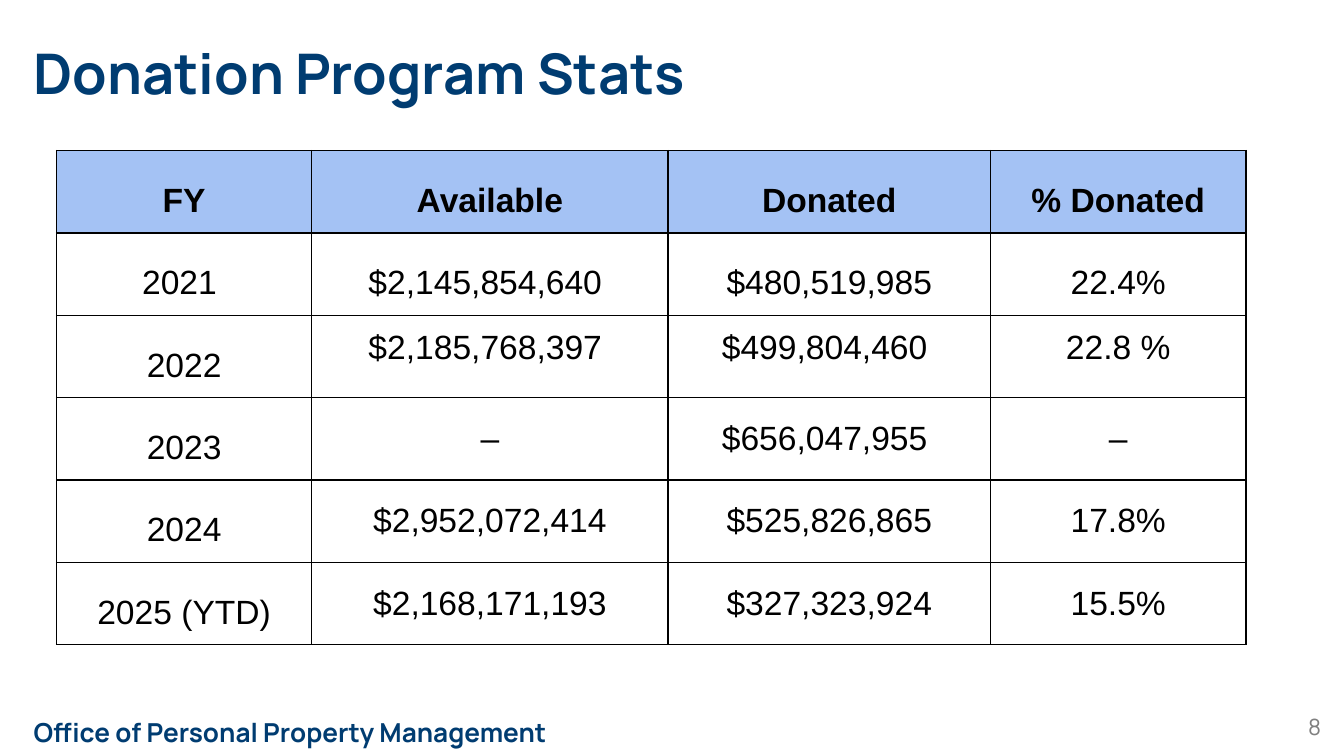
"""Build the Donation Program Stats slide with its table of yearly figures."""
from dataclasses import dataclass

from lxml import etree
from pptx import Presentation
from pptx.dml.color import RGBColor
from pptx.enum.text import MSO_ANCHOR, PP_ALIGN
from pptx.oxml.ns import qn
from pptx.util import Inches, Pt

TOP, MIDDLE, BOTTOM = MSO_ANCHOR.TOP, MSO_ANCHOR.MIDDLE, MSO_ANCHOR.BOTTOM
LEFT, CENTER, RIGHT = PP_ALIGN.LEFT, PP_ALIGN.CENTER, PP_ALIGN.RIGHT


@dataclass(frozen=True)
class Theme:
    brand_font: str = "Manrope"
    table_font: str = "Arial"
    navy: str = "003C71"
    gray: str = "808080"
    black: str = "000000"
    header_fill: str = "A4C2F4"
    title_size: int = 30
    table_size: int = 18
    footer_size: int = 14
    number_size: int = 12
    border_width: float = 0.75


THEME = Theme()
SLIDE_WIDTH = 10
SLIDE_HEIGHT = SLIDE_WIDTH * 9 / 16
MARGIN = 0.25

LABELS = [
    ("Donation Program Stats", (MARGIN, 0.29, 8.51, 0.56), TOP, LEFT,
     THEME.title_size, THEME.navy, True),
    ("Office of Personal Property Management", (MARGIN, 5.35, 4.42, 0.19), MIDDLE, LEFT,
     THEME.footer_size, THEME.navy, True),
    ("8", (9.23, 5.31, 0.6, 0.31), TOP, RIGHT,
     THEME.number_size, THEME.gray, False),
]

STATS = [
    ("FY", "Available", "Donated", "% Donated"),
    ("2021 ", "$2,145,854,640 ", "$480,519,985", "22.4%"),
    ("2022", "$2,185,768,397 ", "$499,804,460 ", "22.8 %"),
    ("2023", "–", "$656,047,955 ", "–"),
    ("2024", "$2,952,072,414", "$525,826,865", "17.8%"),
    ("2025 (YTD)", "$2,168,171,193", "$327,323,924", "15.5%"),
]
VALUE_ANCHORS = [BOTTOM, BOTTOM, TOP, MIDDLE, MIDDLE, MIDDLE]
COLUMN_WIDTHS = [1.9, 2.65, 2.4, 1.9]
TABLE_LEFT, TABLE_TOP, TABLE_HEIGHT = 0.42, 1.12, 3.68
ROW_HEIGHT = TABLE_HEIGHT / len(STATS)
CELL_SIDE, CELL_END = 0.03, 0.1
LINE_SPACING = 1.15


def write(para, text, font, size, color, bold, align):
    para.alignment = align
    span = para.add_run()
    span.text = text
    span.font.name = font
    span.font.size = Pt(size)
    span.font.bold = bold
    span.font.color.rgb = RGBColor.from_string(color)


def add_label(page, text, area, anchor, align, size, color, bold):
    box = page.shapes.add_textbox(*(Inches(length) for length in area))
    frame = box.text_frame
    frame.word_wrap = True
    frame.vertical_anchor = anchor
    frame.margin_left = frame.margin_top = frame.margin_right = frame.margin_bottom = 0
    write(frame.paragraphs[0], text, THEME.brand_font, size, color, bold, align)


def add_borders(cell):
    properties = cell._tc.get_or_add_tcPr()
    for position, side in enumerate(("lnL", "lnR", "lnT", "lnB")):
        line = etree.Element(qn(f"a:{side}"), w=str(Pt(THEME.border_width)))
        fill = etree.SubElement(line, qn("a:solidFill"))
        etree.SubElement(fill, qn("a:srgbClr"), val=THEME.black)
        properties.insert(position, line)


def fill_cell(cell, text, is_header, anchor):
    cell.margin_left = cell.margin_right = Inches(CELL_SIDE)
    cell.margin_top = cell.margin_bottom = Inches(CELL_END)
    cell.vertical_anchor = anchor
    if is_header:
        cell.fill.solid()
        cell.fill.fore_color.rgb = RGBColor.from_string(THEME.header_fill)
    else:
        cell.fill.background()
    para = cell.text_frame.paragraphs[0]
    if anchor == BOTTOM:
        para.line_spacing = LINE_SPACING
    write(para, text, THEME.table_font, THEME.table_size, THEME.black, is_header, CENTER)
    add_borders(cell)


def add_stats(page):
    frame = page.shapes.add_table(
        len(STATS), len(COLUMN_WIDTHS), Inches(TABLE_LEFT), Inches(TABLE_TOP),
        Inches(sum(COLUMN_WIDTHS)), Inches(TABLE_HEIGHT))
    table = frame.table
    table.horz_banding = False
    for column, width in zip(table.columns, COLUMN_WIDTHS):
        column.width = Inches(width)
    for row_index, (values, value_anchor) in enumerate(zip(STATS, VALUE_ANCHORS)):
        table.rows[row_index].height = Inches(ROW_HEIGHT)
        for column_index, text in enumerate(values):
            anchor = value_anchor if column_index else BOTTOM
            fill_cell(table.cell(row_index, column_index), text, row_index == 0, anchor)


def main():
    deck = Presentation()
    deck.slide_width, deck.slide_height = Inches(SLIDE_WIDTH), Inches(SLIDE_HEIGHT)
    page = deck.slides.add_slide(deck.slide_layouts[6])
    for label in LABELS:
        add_label(page, *label)
    add_stats(page)
    deck.save("out.pptx")


if __name__ == "__main__":
    main()
